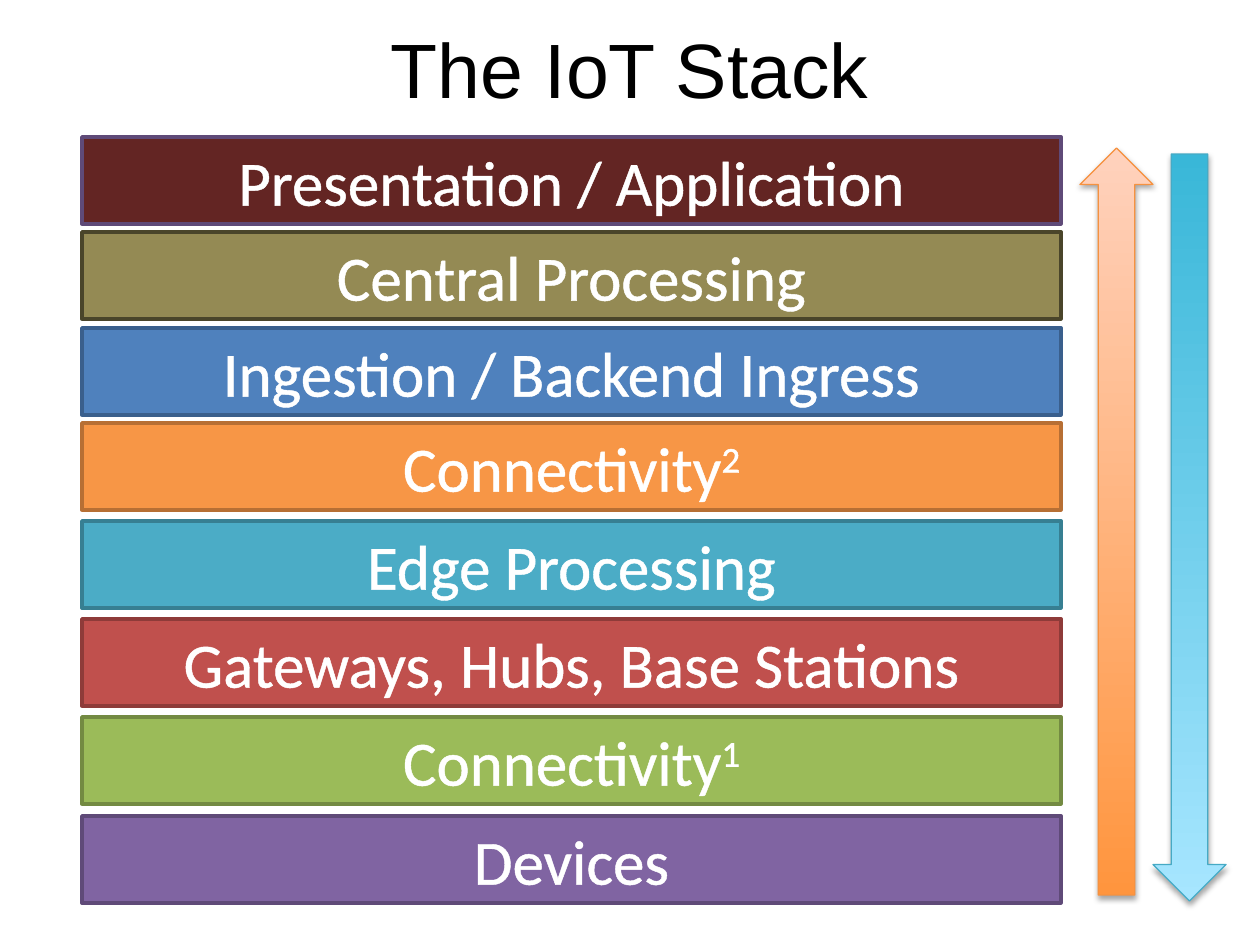
"""Build the IoT stack slide: eight layers with an upward and a downward arrow."""
from lxml import etree
from pptx import Presentation
from pptx.dml.color import RGBColor
from pptx.enum.shapes import MSO_SHAPE
from pptx.enum.text import MSO_ANCHOR, PP_ALIGN
from pptx.oxml import parse_xml
from pptx.oxml.ns import nsdecls, qn
from pptx.util import Pt

RECTANGLE = MSO_SHAPE.RECTANGLE
UP_ARROW = MSO_SHAPE.UP_ARROW
CENTER = PP_ALIGN.CENTER
MIDDLE = MSO_ANCHOR.MIDDLE

EMU_PER_PX = 914400 / 126
SLIDE_SIZE = (1260, 945)
LAYER_LEFT, LAYER_WIDTH, LAYER_HEIGHT = 82, 979, 87
ARROW_WIDTH, ARROW_HEIGHT = 73, 747

LAYERS = [
    (137, "Presentation / Application", "", "632523", "5F4A78"),
    (232, "Central Processing", "", "948A54", "4A452A"),
    (328, "Ingestion / Backend Ingress", "", "4F81BD", "3A5F8C"),
    (423, "Connectivity", "2", "F79646", "B76F34"),
    (521, "Edge Processing", "", "4BACC6", "377F92"),
    (619, "Gateways, Hubs, Base Stations", "", "C0504D", "8E3B39"),
    (717, "Connectivity", "1", "9BBB59", "738A42"),
    (816, "Devices", "", "8064A2", "5F4A78"),
]
ARROWS = [
    (1080, 148, 0, ("FF953E", "FFD2BD"), "F69240"),
    (1153, 154, 180, ("39B7D8", "A7E6FF"), "46AAC5"),
]


def px(*lengths):
    """Convert pixel lengths to EMU."""
    return [round(length * EMU_PER_PX) for length in lengths]


def rgb(color):
    """Return the colour for a hex string."""
    return RGBColor.from_string(color)


def format_run(run, font, size, color):
    """Set the font, size and colour of a run."""
    run.font.name = font
    run.font.size = Pt(size)
    run.font.color.rgb = rgb(color)


def outline_run(run, color):
    """Draw a thin outline around the letters of a run."""
    outline = parse_xml(
        f'<a:ln {nsdecls("a")} w="18415"><a:solidFill>'
        f'<a:srgbClr val="{color}"/></a:solidFill></a:ln>'
    )
    run.font._element.insert(0, outline)


def center_text(text_frame):
    """Centre the text both ways and let it wrap."""
    text_frame.word_wrap = True
    text_frame.vertical_anchor = MIDDLE
    text_frame.paragraphs[0].alignment = CENTER


def add_title(slide, text):
    """Add the slide title."""
    text_frame = slide.shapes.add_textbox(*px(63, 10, 1134, 115)).text_frame
    text_frame.text = text
    center_text(text_frame)
    format_run(text_frame.paragraphs[0].runs[0], "Arial", 44, "000000")


def add_outlined_shape(slide, kind, box, line_color, line_width):
    """Add a preset shape with a line and no inherited shadow."""
    shape = slide.shapes.add_shape(kind, *px(*box))
    shape.shadow.inherit = False
    shape.line.color.rgb = rgb(line_color)
    shape.line.width = Pt(line_width)
    return shape


def add_layer(slide, top, label, superscript, fill_color, line_color):
    """Add one layer of the stack with its label."""
    box = (LAYER_LEFT, top, LAYER_WIDTH, LAYER_HEIGHT)
    shape = add_outlined_shape(slide, RECTANGLE, box, line_color, 2)
    shape.fill.solid()
    shape.fill.fore_color.rgb = rgb(fill_color)
    shape.text_frame.text = label
    center_text(shape.text_frame)
    paragraph = shape.text_frame.paragraphs[0]
    if superscript:
        run = paragraph.add_run()
        run.text = superscript
        run.font._element.set("baseline", "30000")
    for run in paragraph.runs:
        format_run(run, "Calibri", 36, "FFFFFF")
        outline_run(run, "FFFFFF")


def add_shadow(shape):
    """Give a shape a soft shadow below it."""
    effects = shape._element.spPr.find(qn("a:effectLst"))
    shadow = etree.SubElement(
        effects, qn("a:outerShdw"), blurRad="40000", dist="23000",
        dir="5400000", rotWithShape="0",
    )
    color = etree.SubElement(shadow, qn("a:srgbClr"), val="000000")
    etree.SubElement(color, qn("a:alpha"), val="35000")


def add_arrow(slide, left, top, rotation, gradient_colors, line_color):
    """Add a block arrow with a gradient from tail to head."""
    box = (left, top, ARROW_WIDTH, ARROW_HEIGHT)
    shape = add_outlined_shape(slide, UP_ARROW, box, line_color, 0.75)
    shape.rotation = rotation
    shape.fill.gradient()
    shape.fill.gradient_angle = 90
    for stop, color in zip(shape.fill.gradient_stops, gradient_colors):
        stop.color.rgb = rgb(color)
    add_shadow(shape)


def main():
    """Build and save the slide."""
    presentation = Presentation()
    presentation.slide_width, presentation.slide_height = px(*SLIDE_SIZE)
    slide = presentation.slides.add_slide(presentation.slide_layouts[6])
    add_title(slide, "The IoT Stack")
    for layer in reversed(LAYERS):
        add_layer(slide, *layer)
    for arrow in ARROWS:
        add_arrow(slide, *arrow)
    presentation.save("out.pptx")


if __name__ == "__main__":
    main()
